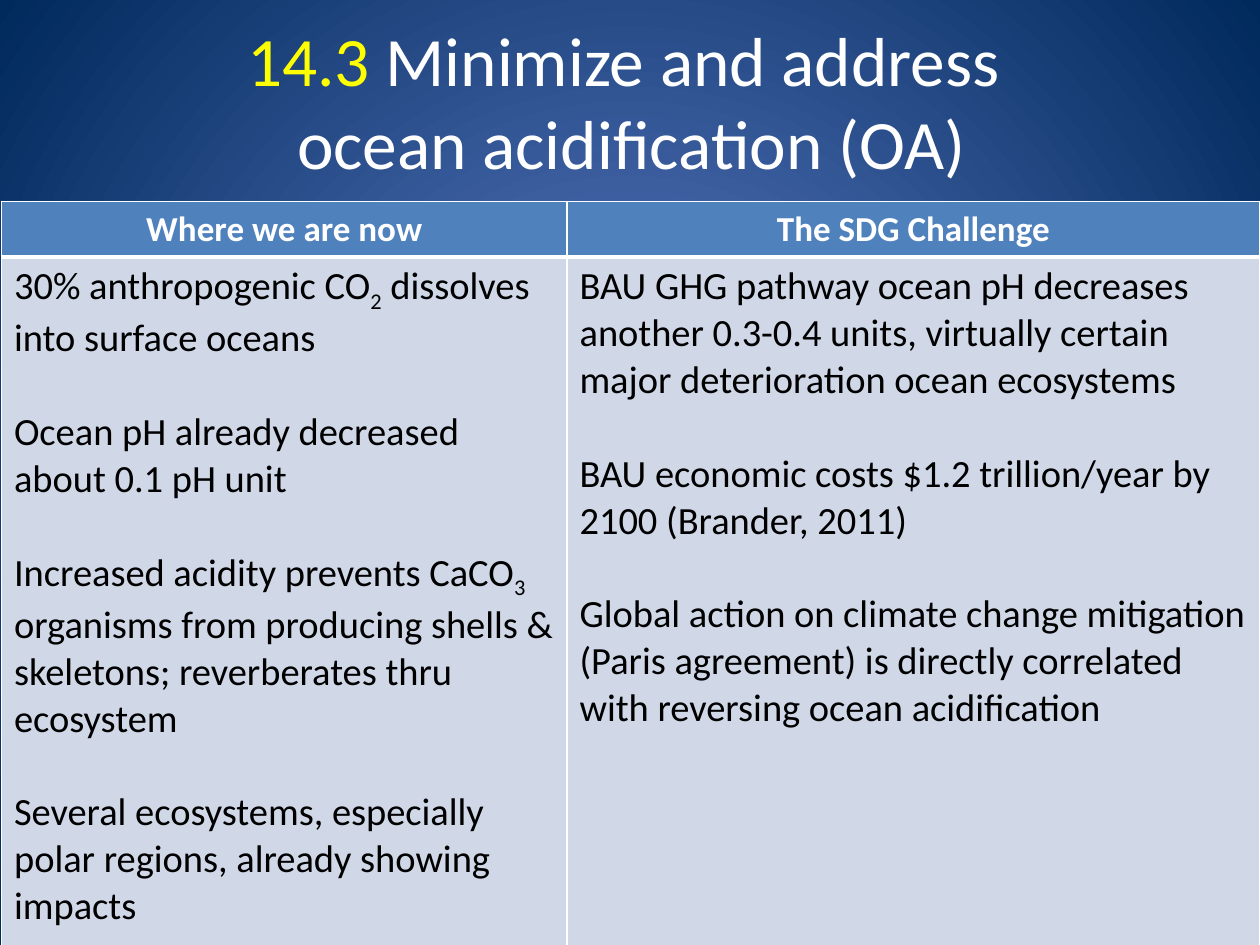
from lxml.etree import SubElement as Sub
from pptx import Presentation
from pptx.dml.color import RGBColor as RGB
from pptx.enum.text import MSO_ANCHOR as Anchor, PP_ALIGN as Align
from pptx.oxml.ns import qn
from pptx.util import Cm, Pt

WHITE = RGB(0xFF, 0xFF, 0xFF)
BLACK = RGB(0x00, 0x00, 0x00)
YELLOW = RGB(0xFF, 0xFF, 0x00)
GLOW = RGB(0x5E, 0x7C, 0xC5)
NAVY = RGB(0x00, 0x29, 0x5C)
BLUE = RGB(0x4F, 0x81, 0xBD)
PALE = RGB(0xD0, 0xD8, 0xE8)
FONT = "Calibri"
GAP = Pt(26.85)  # one line of 22 pt text

COLUMNS = [
    ("Where we are now", Cm(11.4), [
        "30% anthropogenic CO_2_ dissolves into surface oceans",
        "Ocean pH already decreased about 0.1 pH unit",
        "Increased acidity prevents CaCO_3_ organisms from producing "
        "shells & skeletons; reverberates thru ecosystem",
        "Several ecosystems, especially polar regions, already showing impacts",
    ]),
    ("The SDG Challenge", Cm(13.97), [
        "BAU GHG pathway ocean pH decreases another 0.3-0.4 units, "
        "virtually certain major deterioration ocean ecosystems",
        "BAU economic costs $1.2 trillion/year by 2100 (Brander, 2011)",
        "Global action on climate change mitigation (Paris agreement) is "
        "directly correlated with reversing ocean acidification",
    ]),
]


def write(para, text, size, color=BLACK, bold=False, align=Align.LEFT):
    """Add text to a paragraph; parts between underscores are subscripts."""
    para.alignment = align
    for i, part in enumerate(text.split("_")):
        run = para.add_run()
        run.text = part
        font = run.font
        font.name, font.size, font.bold = FONT, Pt(size), bold
        font.color.rgb = color
        if i % 2:
            font._element.set("baseline", "-25000")


def paint_back(slide):
    """Fill the background with a gradient that spreads from the centre."""
    fill = slide.background.fill
    fill.gradient()
    for stop, color in zip(fill.gradient_stops, (GLOW, NAVY)):
        stop.color.rgb = color
    grad = slide.background._cSld.find(".//" + qn("a:gradFill"))
    grad.remove(grad.find(qn("a:lin")))
    way = Sub(grad, qn("a:path"), path="circle")
    Sub(way, qn("a:fillToRect"), {side: "50000" for side in "ltrb"})


def add_title(slide):
    title = slide.shapes.title
    title.left, title.top = Cm(1.3), Cm(0.43)
    title.width, title.height = Cm(22.86), Cm(3.18)
    frame = title.text_frame
    frame.vertical_anchor = Anchor.MIDDLE
    para = frame.paragraphs[0]
    style = dict(size=39.6, align=Align.CENTER)
    write(para, "14.3", color=YELLOW, **style)
    write(para, " Minimize and address ", color=WHITE, **style)
    para.add_line_break()
    write(para, "ocean acidification (OA)", color=WHITE, **style)


def dress(cell, color, top=1, bottom=1):
    """Give a cell white borders, with widths in points, and a fill."""
    props = cell._tc.get_or_add_tcPr()
    for side, width in zip("LRTB", (1, 1, top, bottom)):
        line = Sub(props, qn(f"a:ln{side}"), w=str(Pt(width)))
        Sub(Sub(line, qn("a:solidFill")), qn("a:srgbClr"), val=str(WHITE))
    cell.fill.solid()
    cell.fill.fore_color.rgb = color


def add_grid(slide):
    wide = sum(width for _, width, _ in COLUMNS)
    head, body = Cm(1.09), Cm(13.88)
    grid = slide.shapes.add_table(
        2, len(COLUMNS), Cm(0.03), Cm(4.06), wide, head + body).table
    grid.rows[0].height, grid.rows[1].height = head, body
    for col, (label, width, points) in enumerate(COLUMNS):
        grid.columns[col].width = width
        top, low = grid.cell(0, col), grid.cell(1, col)
        dress(top, BLUE, bottom=3)
        dress(low, PALE, top=3)
        write(top.text_frame.paragraphs[0], label, size=20,
              color=WHITE, bold=True, align=Align.CENTER)
        frame = low.text_frame
        for i, point in enumerate(points):
            para = frame.add_paragraph() if i else frame.paragraphs[0]
            if i:
                para.space_before = GAP
            write(para, point, size=22)


def main():
    deck = Presentation()
    deck.slide_width, deck.slide_height = Cm(25.4), Cm(19.05)
    slide = deck.slides.add_slide(deck.slide_layouts[5])
    paint_back(slide)
    add_title(slide)
    add_grid(slide)
    deck.save("out.pptx")


if __name__ == "__main__":
    main()
